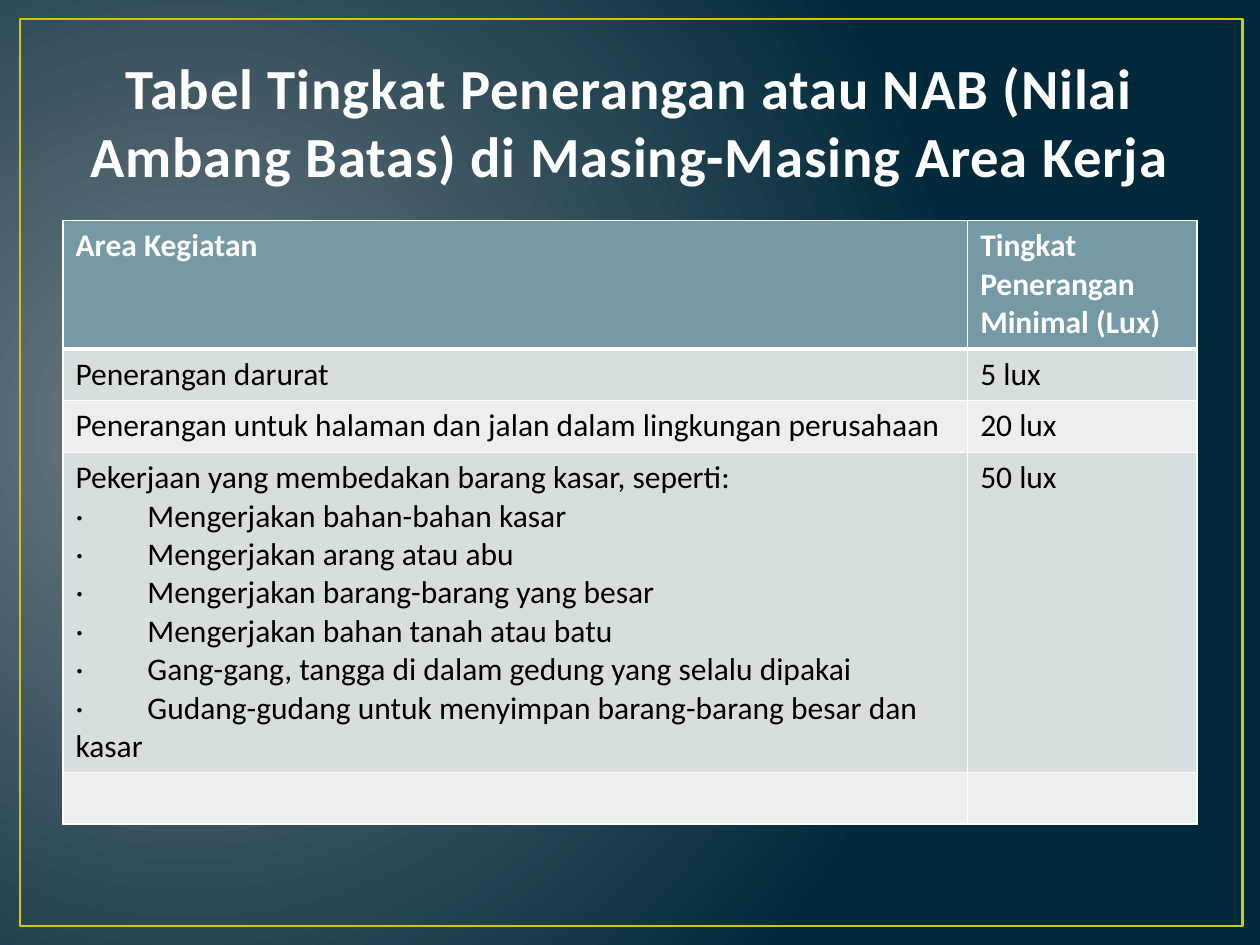
import pptx
import pptx.util
import pptx.dml.color
import pptx.enum.shapes
import pptx.enum.text
import pptx.oxml
import pptx.oxml.ns

Inches = pptx.util.Inches
ITEMS = [
    "Mengerjakan bahan-bahan kasar",
    "Mengerjakan arang atau abu",
    "Mengerjakan barang-barang yang besar",
    "Mengerjakan bahan tanah atau batu",
    "Gang-gang, tangga di dalam gedung yang selalu dipakai",
    "Gudang-gudang untuk menyimpan barang-barang besar dan kasar",
]
ROWS = [
    (["Area Kegiatan"], "Tingkat Penerangan Minimal (Lux)", 1.02),
    (["Penerangan darurat"], "5 lux", 0.41),
    (["Penerangan untuk halaman dan jalan dalam lingkungan perusahaan"], "20 lux", 0.41),
    (["Pekerjaan yang membedakan barang kasar, seperti:"]
     + [f"·\t{item}" for item in ITEMS], "50 lux", 2.54),
    ([], "", 0.41),
]


def color(value):
    """Turn a hex string into a colour."""
    return pptx.dml.color.RGBColor.from_string(value)


def element(xml):
    """Parse one drawing element, with its namespace filled in."""
    return pptx.oxml.parse_xml(xml.replace(" ", f" {pptx.oxml.ns.nsdecls('a')} ", 1))


def outline(tag, value, points):
    """Make a solid line element for a cell border or a text outline."""
    return element(f'<a:{tag} w="{pptx.util.Pt(points)}"><a:solidFill>'
                   f'<a:srgbClr val="{value}"/></a:solidFill></a:{tag}>')


def add_text(para, text, size=18, fill="000000", bold=False):
    """Add a formatted span to a paragraph and return it."""
    span = para.add_run()
    span.text = text
    span.font.name = "Calibri"
    span.font.size = pptx.util.Pt(size)
    span.font.bold = bold
    span.font.color.rgb = color(fill)
    return span


def add_background(page):
    """Fill the page with a radial gradient."""
    fill = page.background.fill
    fill.gradient()
    for stop, value in zip(fill.gradient_stops, ("717C84", "01293A")):
        stop.color.rgb = color(value)
    linear = page.element.find(f".//{pptx.oxml.ns.qn('a:lin')}")
    linear.getparent().replace(linear, element(
        '<a:path path="circle"><a:fillToRect l="15000" t="50000" r="85000" b="60000"/></a:path>'))


def add_frame(page, left, top, width, height):
    """Draw the thin border around the page."""
    frame = page.shapes.add_shape(
        pptx.enum.shapes.MSO_SHAPE.RECTANGLE, left, top, width, height)
    frame.shadow.inherit = False
    frame.fill.background()
    frame.line.color.rgb = color("CFC60D")
    frame.line.width = pptx.util.Pt(1.5)


def add_title(page, left, top, width, height):
    """Place the centred heading at the bottom of its box."""
    box = page.shapes.add_textbox(left, top, width, height)
    box.text_frame.word_wrap = True
    box.text_frame.vertical_anchor = pptx.enum.text.MSO_ANCHOR.BOTTOM
    para = box.text_frame.paragraphs[0]
    para.alignment = pptx.enum.text.PP_ALIGN.CENTER
    span = add_text(
        para, "Tabel Tingkat Penerangan atau NAB (Nilai Ambang Batas) di Masing-Masing Area Kerja",
        size=32.4, fill="FEFEFE", bold=True)
    properties = span.font._element
    properties.set("spc", "50")
    properties.insert(0, outline("ln", "384F55", 1.05))


def fill_cell(cell, lines, row):
    """Write the lines of one cell and set its borders and fill."""
    header = row == 0
    for index, line in enumerate(lines):
        frame = cell.text_frame
        para = frame.add_paragraph() if index else frame.paragraphs[0]
        if "\t" in line:
            para._p.get_or_add_pPr().append(element(
                f'<a:tabLst ><a:tab pos="{Inches(0.57)}" algn="l"/></a:tabLst>'))
        add_text(para, line, fill="FFFFFF" if header else "000000", bold=header)
    properties = cell._tc.get_or_add_tcPr()
    widths = {"lnL": 1, "lnR": 1, "lnT": 3 if row == 1 else 1, "lnB": 3 if header else 1}
    for tag, points in widths.items():
        properties.append(outline(tag, "FFFFFF", points))
    cell.fill.solid()
    cell.fill.fore_color.rgb = color(
        "759AA5" if header else "D6DEE1" if row % 2 else "ECEFF0")


def add_lux_table(page, left, top, width, height):
    """Build the table of work areas and minimum light levels."""
    table = page.shapes.add_table(len(ROWS), 2, left, top, width, height).table
    table.columns[0].width = Inches(7.18)
    table.columns[1].width = width - Inches(7.18)
    for row, (area, level, row_height) in enumerate(ROWS):
        table.rows[row].height = Inches(row_height)
        fill_cell(table.cell(row, 0), area, row)
        fill_cell(table.cell(row, 1), [level] if level else [], row)


def main():
    """Build the deck and save it."""
    deck = pptx.Presentation()
    deck.slide_width, deck.slide_height = Inches(10), Inches(7.5)
    page = deck.slides.add_slide(deck.slide_layouts[6])
    add_background(page)
    add_frame(page, Inches(0.16), Inches(0.15), Inches(9.7), Inches(7.2))
    add_title(page, Inches(0.5), Inches(0.3), Inches(9), Inches(1.25))
    add_lux_table(page, Inches(0.5), Inches(1.75), Inches(9), Inches(4.79))
    deck.save("out.pptx")


if __name__ == "__main__":
    main()
